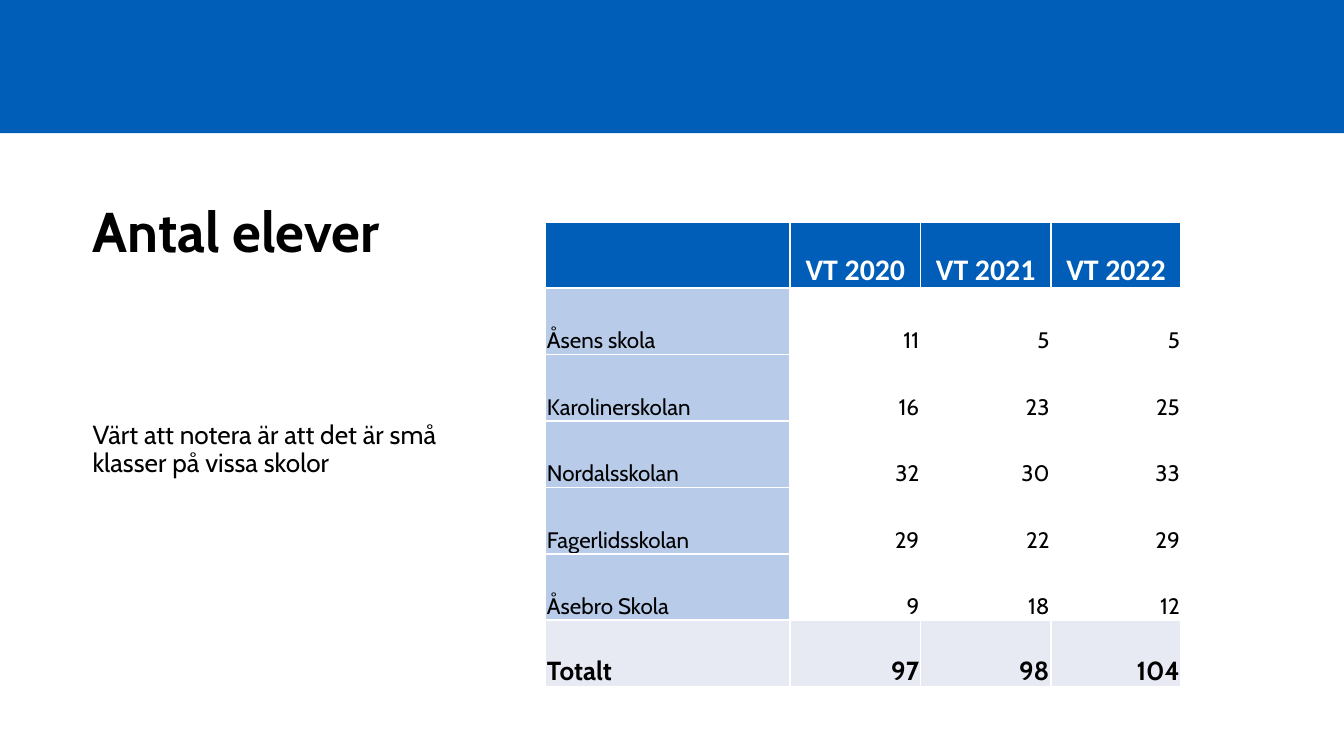
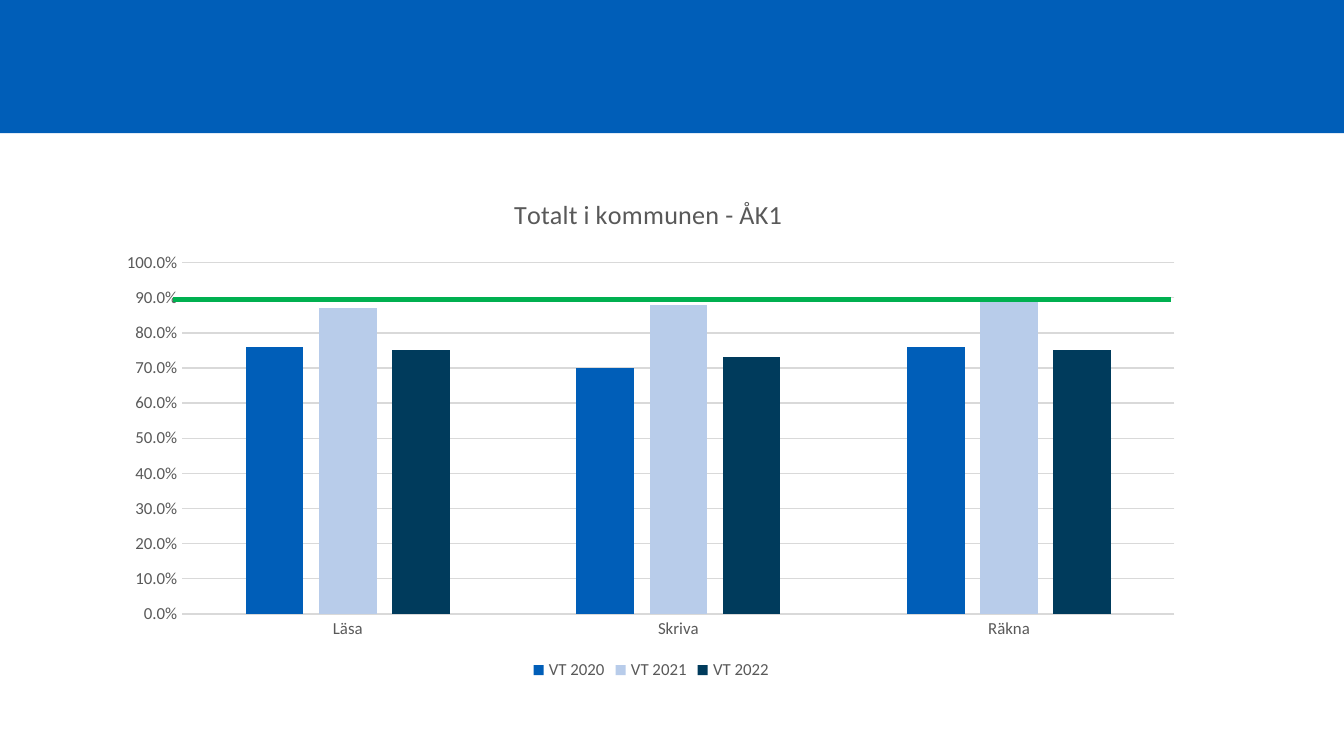
from lxml import etree
from pptx import Presentation
from pptx.chart.data import CategoryChartData
from pptx.dml.color import RGBColor
from pptx.enum.chart import XL_CHART_TYPE, XL_LEGEND_POSITION, XL_TICK_MARK
from pptx.enum.shapes import MSO_CONNECTOR, MSO_SHAPE
from pptx.enum.text import MSO_ANCHOR, PP_ALIGN
from pptx.oxml.ns import qn
from pptx.util import Inches, Pt

COLUMNS = XL_CHART_TYPE.COLUMN_CLUSTERED
LEGEND_BELOW = XL_LEGEND_POSITION.BOTTOM
NO_TICK = XL_TICK_MARK.NONE
STRAIGHT = MSO_CONNECTOR.STRAIGHT
RECTANGLE = MSO_SHAPE.RECTANGLE
TOP, BOTTOM = MSO_ANCHOR.TOP, MSO_ANCHOR.BOTTOM
LEFT, CENTER, RIGHT = PP_ALIGN.LEFT, PP_ALIGN.CENTER, PP_ALIGN.RIGHT

# Shared look
WIDTH = 10
HEIGHT = WIDTH * 9 / 16
BAND_HEIGHT = 0.99
MARGIN = 0.59
TEXT_FONT, DATA_FONT = "Cabin", "Calibri"
BLUE, PALE_BLUE, NAVY = "005EB8", "B8CCEA", "003B5C"
TOTAL_FILL, GREEN = "E7EAF3", "00B050"
BLACK, WHITE, GREY, GRID_GREY = "000000", "FFFFFF", "595959", "D9D9D9"

# Content
YEARS = ["VT 2020", "VT 2021", "VT 2022"]
PUPILS = [
    ("Åsens skola", 11, 5, 5),
    ("Karolinerskolan", 16, 23, 25),
    ("Nordalsskolan", 32, 30, 33),
    ("Fagerlidsskolan", 29, 22, 29),
    ("Åsebro Skola", 9, 18, 12),
    ("Totalt", 97, 98, 104),
]
SUBJECTS = ["Läsa", "Skriva", "Räkna"]
RESULTS = [(0.76, 0.7, 0.76), (0.87, 0.88, 0.89), (0.75, 0.73, 0.75)]


def color(value):
    return RGBColor.from_string(value)


def set_font(font, name, size, fill, bold=False):
    font.name, font.size, font.bold = name, Pt(size), bold
    font.color.rgb = color(fill)


def inches(*lengths):
    return [Inches(length) for length in lengths]


def add_page(deck):
    """Add a blank page with the blue band across its top."""
    page = deck.slides.add_slide(deck.slide_layouts[6])
    band = page.shapes.add_shape(RECTANGLE, *inches(0, 0, WIDTH, BAND_HEIGHT))
    band.shadow.inherit = False
    band.fill.solid()
    band.fill.fore_color.rgb = color(BLUE)
    band.line.fill.background()
    return page


def add_text(page, area, text, size, bold=False, anchor=TOP):
    frame = page.shapes.add_textbox(*inches(*area)).text_frame
    frame.word_wrap = True
    frame.vertical_anchor = anchor
    para = frame.paragraphs[0]
    para.text = text
    para.line_spacing = 0.9
    set_font(para.font, TEXT_FONT, size, BLACK, bold)


def add_borders(cell, line_color, points):
    properties = cell._tc.get_or_add_tcPr()
    for side in ("a:lnL", "a:lnR", "a:lnT", "a:lnB"):
        line = etree.SubElement(properties, qn(side), w=str(Pt(points)))
        fill = etree.SubElement(line, qn("a:solidFill"))
        etree.SubElement(fill, qn("a:srgbClr"), val=line_color)


def fill_cell(cell, text, fill, align, font):
    cell.margin_left = cell.margin_top = cell.margin_right = Inches(0.01)
    cell.margin_bottom = 0
    cell.vertical_anchor = BOTTOM
    add_borders(cell, WHITE, 1)
    if fill:
        cell.fill.solid()
        cell.fill.fore_color.rgb = color(fill)
    else:
        cell.fill.background()
    para = cell.text_frame.paragraphs[0]
    para.text = str(text)
    para.alignment = align
    set_font(para.font, *font)


def add_pupil_table(page, left, top, widths, height):
    rows = len(PUPILS) + 1
    area = inches(left, top, sum(widths), height)
    table = page.shapes.add_table(rows, len(widths), *area).table
    table.first_row = table.horz_banding = False
    for column, width in zip(table.columns, widths):
        column.width = Inches(width)

    for col, text in enumerate(["", *YEARS]):
        fill_cell(table.cell(0, col), text, BLUE, CENTER,
                  (DATA_FONT, 16, WHITE, True))
    for row, values in enumerate(PUPILS, start=1):
        is_total = row == len(PUPILS)
        font = (TEXT_FONT, 14 if is_total else 12, BLACK, is_total)
        for col, value in enumerate(values):
            label_fill = PALE_BLUE if col == 0 else None
            fill_cell(table.cell(row, col), value,
                      TOTAL_FILL if is_total else label_fill,
                      RIGHT if col else LEFT, font)


def set_layout(element, index, **shares):
    """Place a chart part by shares of the chart's size."""
    for old in element.findall(qn("c:layout")):
        element.remove(old)
    layout = etree.Element(qn("c:layout"))
    manual = etree.SubElement(layout, qn("c:manualLayout"))
    if "w" in shares:
        etree.SubElement(manual, qn("c:layoutTarget"), val="inner")
    for key in ("x", "y"):
        etree.SubElement(manual, qn(f"c:{key}Mode"), val="edge")
    for key, share in shares.items():
        etree.SubElement(manual, qn(f"c:{key}"), val=str(share))
    element.insert(index, layout)


def style_axis(axis):
    axis.major_tick_mark = axis.minor_tick_mark = NO_TICK
    set_font(axis.tick_labels.font, DATA_FONT, 9, GREY)


def style_line(line, line_color, points):
    line.color.rgb = color(line_color)
    line.width = Pt(points)


def add_result_chart(page, area, title):
    data = CategoryChartData(number_format="0.0%")
    data.categories = SUBJECTS
    for year, values in zip(YEARS, RESULTS):
        data.add_series(year, values)
    chart = page.shapes.add_chart(COLUMNS, *inches(*area), data).chart
    set_font(chart.font, DATA_FONT, 10, BLACK)

    # Title and legend
    para = chart.chart_title.text_frame.paragraphs[0]
    para.text = title
    set_font(para.font, DATA_FONT, 14, GREY)
    chart.has_legend = True
    chart.legend.position = LEGEND_BELOW
    chart.legend.include_in_layout = False
    set_font(chart.legend.font, DATA_FONT, 9, GREY)

    # Columns
    plot = chart.plots[0]
    plot.vary_by_categories = False
    plot.gap_width, plot.overlap = 219, -27
    for series, fill in zip(plot.series, (BLUE, PALE_BLUE, NAVY)):
        series.format.fill.solid()
        series.format.fill.fore_color.rgb = color(fill)

    # Axes
    subjects, shares = chart.category_axis, chart.value_axis
    style_axis(subjects)
    style_axis(shares)
    style_line(subjects.format.line, GRID_GREY, 0.75)
    shares.format.line.fill.background()
    style_line(shares.major_gridlines.format.line, GRID_GREY, 0.75)
    shares.minimum_scale, shares.maximum_scale = 0, 1
    shares.major_unit = 0.1
    shares.tick_labels.number_format = "0.0%"
    shares.tick_labels.number_format_is_linked = False

    plot_area = chart._chartSpace.chart.plotArea
    set_layout(plot_area, 0, x=0.07, y=0.17, w=0.91, h=0.69)
    set_layout(chart.chart_title._element, 1, x=0.37, y=0.03)


def add_goal_line(page, left, right, y):
    line = page.shapes.add_connector(STRAIGHT, *inches(left, y, right, y))
    style_line(line.line, GREEN, 3)
    etree.SubElement(line._element.spPr, qn("a:effectLst"))


def main():
    deck = Presentation()
    deck.slide_width, deck.slide_height = inches(WIDTH, HEIGHT)

    # Number of pupils
    page = add_page(deck)
    add_text(page, (MARGIN, 1.22, 8.06, 0.8), "Antal elever", 30, True, BOTTOM)
    add_text(page, (MARGIN, 3.09, 3.02, 2.11),
             "Värt att notera är att det är små klasser på vissa skolor", 14)
    add_pupil_table(page, 4.06, 1.65, [1.82] + [0.97] * len(YEARS), 3.46)

    # Results in the municipality
    page = add_page(deck)
    add_result_chart(page, (0.79, 1.31, 8.11, 3.79), "Totalt i kommunen - ÅK1")
    add_goal_line(page, 1.29, 8.71, 2.23)

    deck.save("out.pptx")


if __name__ == "__main__":
    main()
